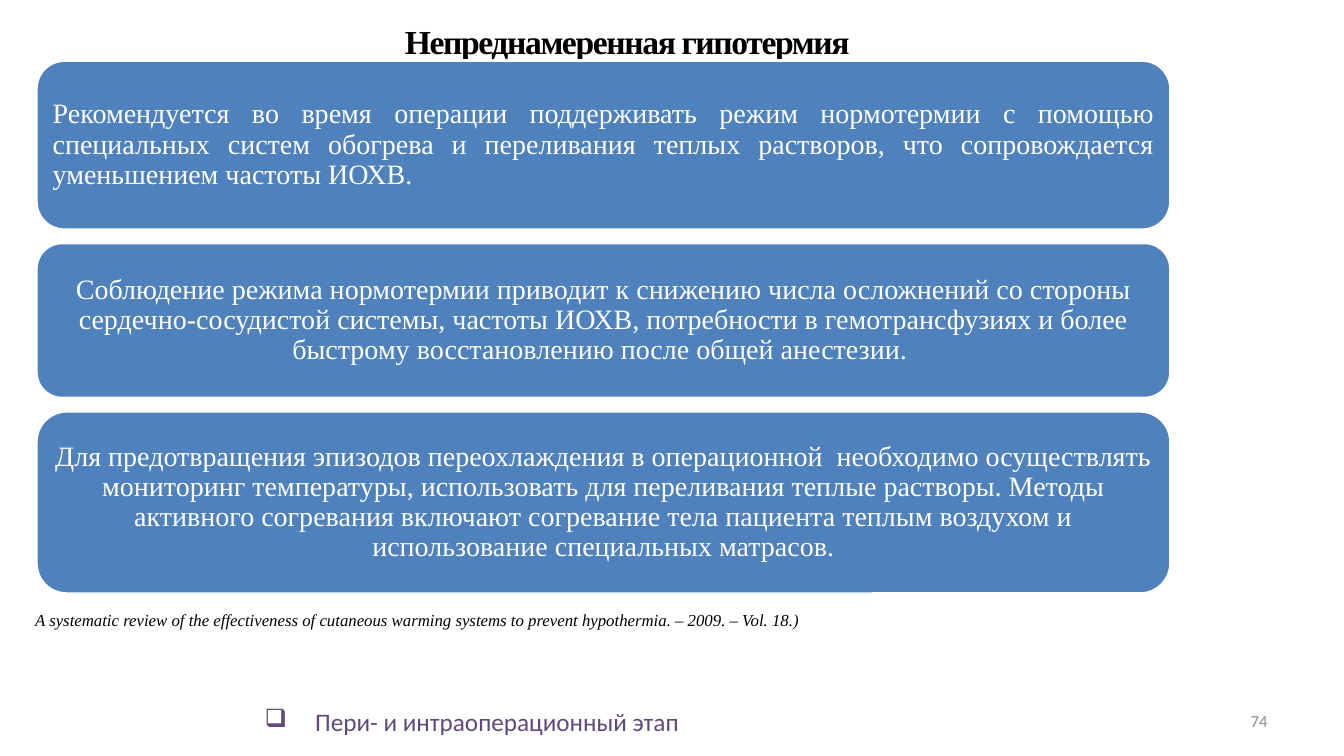
import pptx
import pptx.util
import pptx.dml.color
import pptx.enum.shapes
import pptx.enum.text
import lxml.etree

Inches = pptx.util.Inches
Align = pptx.enum.text.PP_ALIGN
Anchor = pptx.enum.text.MSO_ANCHOR

STAGE = "Пери- и интраоперационный этап"
HEADING = "Непреднамеренная гипотермия"
CITATION = ("A systematic review of the effectiveness of cutaneous warming systems "
            "to prevent hypothermia. – 2009. – Vol. 18.)")
PAGE_NUMBER = "74"
# text, height, alignment
RECOMMENDATIONS = [
    ("Рекомендуется во время операции поддерживать режим нормотермии с помощью "
     "специальных систем обогрева и переливания теплых растворов, что сопровождается "
     "уменьшением частоты ИОХВ.", 1.68, Align.JUSTIFY),
    ("Соблюдение режима нормотермии приводит к снижению числа осложнений со стороны "
     "сердечно-сосудистой системы, частоты ИОХВ, потребности в гемотрансфузиях и более "
     "быстрому восстановлению после общей анестезии. ", 1.54, Align.CENTER),
    ("Для предотвращения эпизодов переохлаждения в операционной  необходимо осуществлять "
     "мониторинг температуры, использовать для переливания теплые растворы. Методы "
     "активного согревания включают согревание тела пациента теплым воздухом и "
     "использование специальных матрасов.", 1.81, Align.CENTER),
]
CARD_LEFT, CARD_TOP, CARD_WIDTH, CARD_GAP = 0.36, 0.6, 11.25, 0.13
CARD_INSET = 0.08

THEME = {
    "card": "4F81BD",
    "border": "FFFFFF",
    "stage": {"name": "Calibri", "size": 18, "color": "604A7B"},
    "heading": {"name": "Times New Roman", "size": 24, "color": "000000", "bold": True},
    "body": {"name": "Times New Roman", "size": 20, "color": "FFFFFF"},
    "citation": {"name": "Times New Roman", "size": 12, "color": "000000", "italic": True},
    "page": {"name": "Calibri", "size": 12, "color": "8C8C8C"},
}


def rgb(code):
    return pptx.dml.color.RGBColor.from_string(code)


def write(shape, text, style, align, anchor=Anchor.MIDDLE):
    frame = shape.text_frame
    frame.word_wrap = True
    frame.vertical_anchor = anchor
    paragraph = frame.paragraphs[0]
    paragraph.alignment = align
    run = paragraph.add_run()
    run.text = text
    for attribute, value in THEME[style].items():
        if attribute == "color":
            run.font.color.rgb = rgb(value)
        elif attribute == "size":
            run.font.size = pptx.util.Pt(value)
        else:
            setattr(run.font, attribute, value)
    return paragraph


def add_label(slide, box, *text_format):
    label = slide.shapes.add_textbox(*map(Inches, box))
    return write(label, *text_format)


def add_stage(slide):
    """Place the slide title at the foot, with a box-shaped bullet."""
    title = slide.shapes.title
    title.left, title.top, title.width, title.height = map(Inches, (0, 6.81, 9.36, 0.69))
    title.text_frame.auto_size = pptx.enum.text.MSO_AUTO_SIZE.NONE
    properties = title.text_frame.paragraphs[0]._p.get_or_add_pPr()
    properties.set("marL", str(Inches(0.5)))
    properties.set("indent", str(Inches(-0.5)))
    bullet = lxml.etree.SubElement(properties, pptx.oxml.ns.qn("a:buChar"))
    bullet.set("char", "❑")
    write(title, STAGE, "stage", Align.CENTER)


def add_cards(slide):
    top = CARD_TOP
    for text, height, align in RECOMMENDATIONS:
        card = slide.shapes.add_shape(
            pptx.enum.shapes.MSO_SHAPE.ROUNDED_RECTANGLE,
            *map(Inches, (CARD_LEFT, top, CARD_WIDTH, height)))
        card.shadow.inherit = False
        card.fill.solid()
        card.fill.fore_color.rgb = rgb(THEME["card"])
        card.line.color.rgb = rgb(THEME["border"])
        card.line.width = pptx.util.Pt(2)
        for side in ("left", "top", "right", "bottom"):
            setattr(card.text_frame, f"margin_{side}", Inches(CARD_INSET))
        write(card, text, "body", align).line_spacing = 0.9
        top += height + CARD_GAP


def main():
    deck = pptx.Presentation()
    deck.slide_width, deck.slide_height = Inches(13.33), Inches(7.5)
    slide = deck.slides.add_slide(deck.slide_layouts[5])
    add_stage(slide)
    heading = add_label(slide, (0, 0.05, 12.44, 0.71), HEADING, "heading", Align.CENTER)
    heading.runs[0].font._element.set("spc", "-100")
    add_cards(slide)
    add_label(slide, (0.25, 6, 11.21, 0.3), CITATION, "citation", Align.LEFT, Anchor.TOP)
    add_label(slide, (9.56, 6.95, 3.11, 0.4), PAGE_NUMBER, "page", Align.RIGHT)
    deck.save("out.pptx")


if __name__ == "__main__":
    main()
